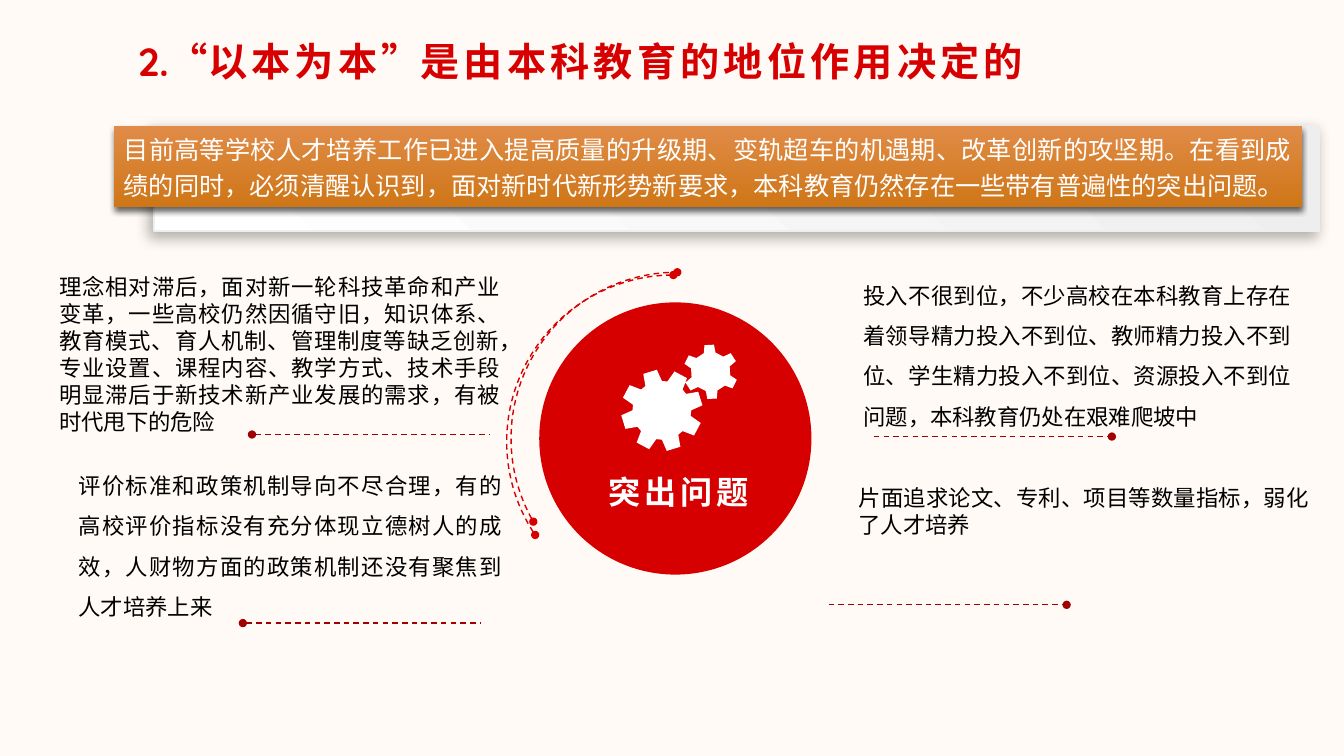
from math import cos, radians, sin

from lxml.etree import SubElement
from pptx import Presentation
from pptx.dml.color import RGBColor
from pptx.enum.dml import MSO_LINE_DASH_STYLE as Dash
from pptx.enum.shapes import MSO_CONNECTOR as Connector, MSO_SHAPE as Shape
from pptx.enum.text import MSO_ANCHOR as Anchor, MSO_AUTO_SIZE as AutoSize, PP_ALIGN as Align
from pptx.oxml.ns import qn
from pptx.util import Cm, Pt

CREAM = RGBColor(0xFF, 0xFA, 0xF5)
RED = RGBColor(0xD7, 0x00, 0x00)
DARK_RED = RGBColor(0xA1, 0x00, 0x00)
ORANGE = RGBColor(0xE0, 0x8B, 0x47)
DARK_ORANGE = RGBColor(0xCF, 0x76, 0x17)
GREY = RGBColor(0xEE, 0xEE, 0xEE)
WHITE = RGBColor(0xFF, 0xFF, 0xFF)
BLACK = RGBColor(0x00, 0x00, 0x00)
CJK_FONT = "Noto Sans CJK SC"
LATIN_FONT = "Quicksand"

TITLE_RUNS = [("2.“", LATIN_FONT, 0), ("以本为本", CJK_FONT, 3),
              ("”", LATIN_FONT, 0), ("是由本科教育的地位作用决定的", CJK_FONT, 3)]
SUMMARY = ("目前高等学校人才培养工作已进入提高质量的升级期、变轨超车的机遇期、改革创新的攻坚期。"
           "在看到成绩的同时，必须清醒认识到，面对新时代新形势新要求，"
           "本科教育仍然存在一些带有普遍性的突出问题")
# left, top, width, height, line spacing, anchor, text
PROBLEMS = [
    (21.51, 6.58, 11.3, 4.37, 1.5, Anchor.BOTTOM,
     "投入不很到位，不少高校在本科教育上存在着领导精力投入不到位、教师精力投入不到位、"
     "学生精力投入不到位、资源投入不到位问题，本科教育仍处在艰难爬坡中"),
    (1.24, 6.71, 11.63, 4.37, 1, Anchor.BOTTOM,
     "理念相对滞后，面对新一轮科技革命和产业变革，一些高校仍然因循守旧，知识体系、教育模式、"
     "育人机制、管理制度等缺乏创新，专业设置、课程内容、教学方式、技术手段明显滞后于"
     "新技术新产业发展的需求，有被时代甩下的危险"),
    (1.73, 11.38, 11.18, 4.37, 1.5, Anchor.BOTTOM,
     "评价标准和政策机制导向不尽合理，有的高校评价指标没有充分体现立德树人的成效，"
     "人财物方面的政策机制还没有聚焦到人才培养上来"),
    (21.39, 12.07, 11.86, 3, 1, Anchor.TOP,
     "片面追求论文、专利、项目等数量指标，弱化了人才培养"),
]
RULE_LENGTH = 6
# left, height on the slide, end that carries the dot
RULES = [(22.02, 11, "tailEnd"), (20.88, 15.24, "tailEnd"),
         (6.35, 10.95, "headEnd"), (6.12, 15.7, "headEnd")]
# centre x, centre y, radius, start angle
ARCS = [(17.07, 11.05, 4.19, 150), (16.97, 11.13, 4.2, 146)]
# centre x, centre y, tip radius, root radius, teeth, angle of first tooth
GEARS = [(16.68, 10.34, 1.03, 0.74, 8, 28), (17.91, 9.37, 0.69, 0.5, 6, 27)]


def polar(x, y, radius, angle):
    return Cm(x + radius * cos(radians(angle))), Cm(y + radius * sin(radians(angle)))


def gear_points(x, y, tip, root, teeth, first):
    profile = [(root, -17), (tip, -10), (tip, 10), (root, 17)]
    return [polar(x, y, radius, first + tooth * 360 / teeth + offset)
            for tooth in range(teeth) for radius, offset in profile]


class SlideBuilder:
    def __init__(self, presentation):
        self.slide = presentation.slides.add_slide(presentation.slide_layouts[5])
        self.shapes = self.slide.shapes
        self.slide.background.fill.solid()
        self.slide.background.fill.fore_color.rgb = CREAM

    def run(self, paragraph, text, size, color, font=CJK_FONT, bold=False, spacing=0):
        run = paragraph.add_run()
        run.text = text
        run.font.size = Pt(size)
        run.font.bold = bold
        run.font.color.rgb = color
        run.font.name = font
        properties = run.font._element
        properties.set("spc", str(round(spacing * 100)))
        SubElement(properties, qn("a:ea"), typeface=CJK_FONT)

    def paragraph(self, shape, align, anchor, line_spacing=1, wrap=True):
        """Prepare the text frame and return its first paragraph."""
        frame = shape.text_frame
        frame.auto_size = AutoSize.NONE
        frame.word_wrap = wrap
        frame.vertical_anchor = anchor
        paragraph = frame.paragraphs[0]
        paragraph.alignment = align
        paragraph.line_spacing = line_spacing
        return paragraph

    def title(self, box, runs):
        title = self.shapes.title
        title.left, title.top, title.width, title.height = map(Cm, box)
        paragraph = self.paragraph(title, Align.LEFT, Anchor.MIDDLE)
        for text, font, spacing in runs:
            self.run(paragraph, text, 28, RED, font, True, spacing)

    def text_box(self, box, align, anchor, line_spacing=1, wrap=True):
        shape = self.shapes.add_textbox(*map(Cm, box))
        return shape, self.paragraph(shape, align, anchor, line_spacing, wrap)

    def circle(self, left, top, diameter, color):
        shape = self.shapes.add_shape(Shape.OVAL, *map(Cm, (left, top, diameter, diameter)))
        self.plain(shape, color)

    def plain(self, shape, color):
        shape.shadow.inherit = False
        shape.fill.solid()
        shape.fill.fore_color.rgb = color
        shape.line.fill.background()

    def panel(self, box, colors, angle, shadow):
        """Add a gradient rectangle; shadow is alpha, blur, distance, direction."""
        shape = self.shapes.add_shape(Shape.RECTANGLE, *map(Cm, box))
        shape.fill.gradient()
        shape.fill.gradient_angle = 360 - angle
        for stop, color in zip(shape.fill.gradient_stops, colors):
            stop.color.rgb = color
        shape.line.fill.background()
        shape.shadow.inherit = False
        alpha, blur, distance, direction = shadow
        effects = shape._element.spPr.find(qn("a:effectLst"))
        outer = SubElement(effects, qn("a:outerShdw"), blurRad=str(Pt(blur)),
                           dist=str(Pt(distance)), dir=str(direction * 60000),
                           algn="ctr", rotWithShape="0")
        color = SubElement(outer, qn("a:srgbClr"), val=str(BLACK))
        SubElement(color, qn("a:alpha"), val=str(alpha * 1000))
        return shape

    def dashed(self, shape, color, dots):
        shape.line.color.rgb = color
        shape.line.width = Pt(1)
        shape.line.dash_style = Dash.DASH
        for end in dots:
            SubElement(shape.line._get_or_add_ln(), qn(f"a:{end}"), type="oval")

    def rule(self, left, top, dot):
        line = self.shapes.add_connector(
            Connector.STRAIGHT, *map(Cm, (left, top, left + RULE_LENGTH, top)))
        self.dashed(line, DARK_RED, [dot])
        SubElement(line._element.spPr, qn("a:effectLst"))

    def outline(self, contours, close):
        builder = self.shapes.build_freeform(*contours[0][0])
        builder.add_line_segments(contours[0][1:], close=close)
        for first, *others in contours[1:]:
            builder.move_to(*first)
            builder.add_line_segments(others, close=close)
        return builder.convert_to_shape()

    def arc(self, x, y, radius, start):
        points = [polar(x, y, radius, angle) for angle in range(start, 271, 2)]
        shape = self.outline([points], close=False)
        shape.shadow.inherit = False
        shape.fill.background()
        self.dashed(shape, RED, ["headEnd", "tailEnd"])

    def gears(self, gears):
        shape = self.outline([gear_points(*gear) for gear in gears], close=True)
        self.plain(shape, WHITE)


def main():
    presentation = Presentation()
    presentation.slide_width, presentation.slide_height = Cm(33.87), Cm(19.05)
    builder = SlideBuilder(presentation)
    builder.title((3.23, 0.81, 23.65, 1.45), TITLE_RUNS)

    for rule in RULES:
        builder.rule(*rule)
    for arc in ARCS:
        builder.arc(*arc)
    builder.circle(13.59, 7.62, 6.86, RED)
    builder.gears(GEARS)
    label, paragraph = builder.text_box((14.88, 11.79, 4.29, 1.24), Align.CENTER,
                                        Anchor.TOP, wrap=False)
    label.text_frame.margin_left = Cm(0.41)
    builder.run(paragraph, "突出问题", 23, WHITE, bold=True, spacing=2.5)

    for *box, line_spacing, anchor, text in PROBLEMS:
        _, paragraph = builder.text_box(box, Align.JUSTIFY, anchor, line_spacing)
        builder.run(paragraph, text, 16, BLACK)

    backdrop = builder.panel((3.89, 3.18, 29.36, 2.64), (GREY, WHITE), 135, (30, 10, 5, 135))
    backdrop.line.color.rgb = GREY
    backdrop.line.width = Pt(1.5)
    summary = builder.panel((2.87, 3.18, 29.95, 2.03), (ORANGE, DARK_ORANGE), 90, (60, 4, 3, 90))
    paragraph = builder.paragraph(summary, Align.JUSTIFY, Anchor.MIDDLE, 1.1)
    builder.run(paragraph, SUMMARY, 18, WHITE)
    builder.run(paragraph, "。", 20, WHITE)
    presentation.save("out.pptx")


if __name__ == "__main__":
    main()
